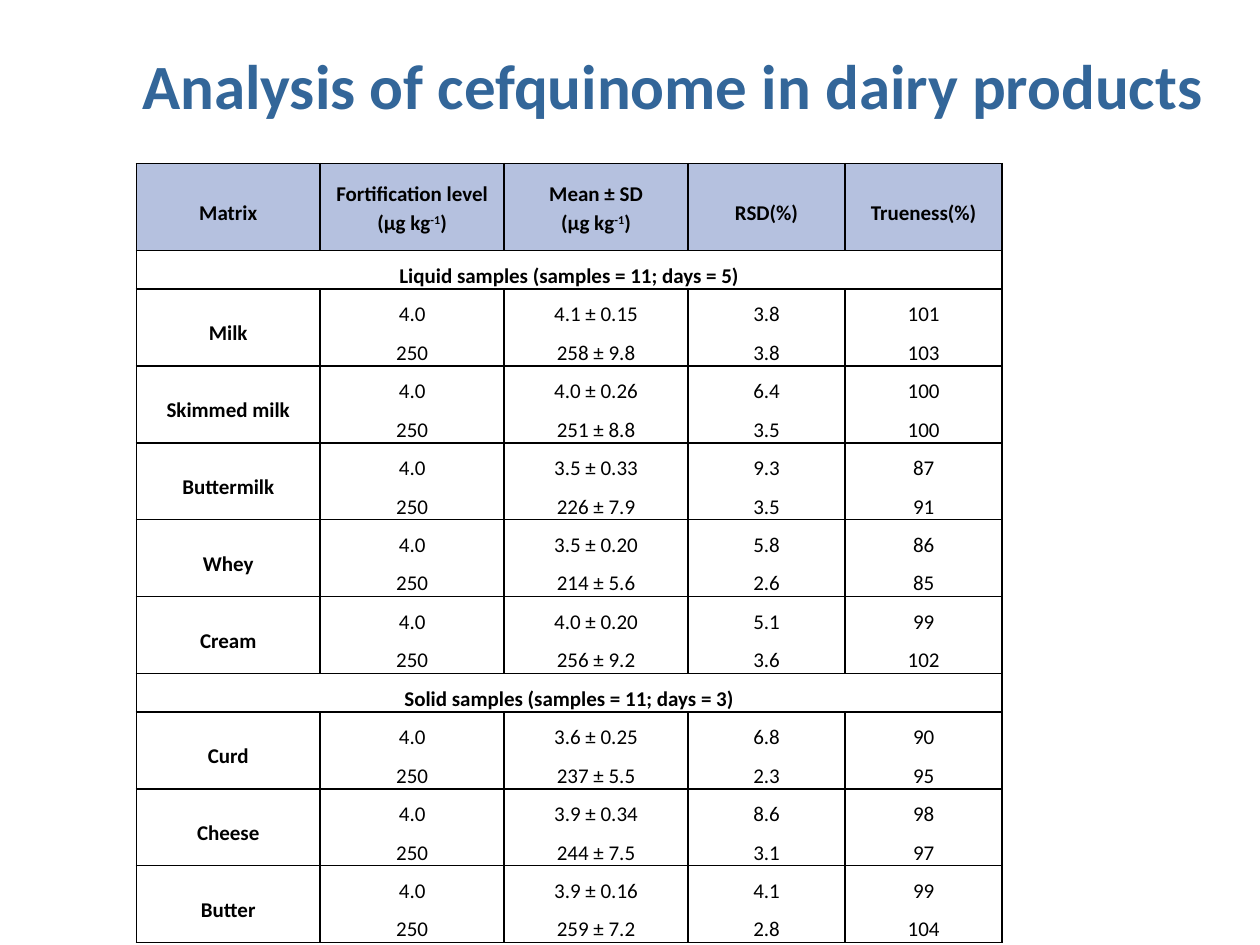
from pptx import Presentation
from pptx.dml.color import RGBColor
from pptx.enum.text import MSO_ANCHOR as Anchor, MSO_AUTO_SIZE as AutoSize, PP_ALIGN as Align
from pptx.oxml import parse_xml
from pptx.oxml.ns import nsdecls
from pptx.util import Pt

COLORS = {"title": "336699", "text": "000000", "border": "000000", "header": "B5C1DF"}
TITLE = "Analysis of cefquinome in dairy products"
UNIT = ("(μg kg", "-1", ")")
HEADERS = [
    [("Matrix",)],
    [("Fortification level",), UNIT],
    [("Mean ± SD",), UNIT],
    [("RSD(%)",)],
    [("Trueness(%)",)],
]
LEVELS = ("4.0", "250")
SECTIONS = [
    ("Liquid samples (samples = 11; days = 5)", [
        ("Milk", ("4.1 ± 0.15", "3.8", "101"), ("258 ± 9.8", "3.8", "103")),
        ("Skimmed milk", ("4.0 ± 0.26", "6.4", "100"), ("251 ± 8.8", "3.5", "100")),
        ("Buttermilk", ("3.5 ± 0.33", "9.3", "87"), ("226 ± 7.9", "3.5", "91")),
        ("Whey", ("3.5 ± 0.20", "5.8", "86"), ("214 ± 5.6", "2.6", "85")),
        ("Cream", ("4.0 ± 0.20", "5.1", "99"), ("256 ± 9.2", "3.6", "102")),
    ]),
    ("Solid samples (samples = 11; days = 3)", [
        ("Curd", ("3.6 ± 0.25", "6.8", "90"), ("237 ± 5.5", "2.3", "95")),
        ("Cheese", ("3.9 ± 0.34", "8.6", "98"), ("244 ± 7.5", "3.1", "97")),
        ("Butter", ("3.9 ± 0.16", "4.1", "99"), ("259 ± 7.2", "2.8", "104")),
    ]),
]
COLUMN_WIDTHS = [105.1, 105.1, 105.1, 89.8, 89.8]
HEADER_HEIGHT, ROW_HEIGHT = 49.7, 21.6
TABLE_LEFT, TABLE_TOP = 77.9, 93.5
TITLE_BOX = {"left": Pt(74), "top": Pt(28.1), "width": Pt(620.6), "height": Pt(104.4)}
TITLE_FRAME = {"word_wrap": True, "auto_size": AutoSize.NONE, "vertical_anchor": Anchor.TOP,
               "margin_right": 0}
TITLE_PARA = {"alignment": Align.LEFT, "line_spacing": 0.9}
TITLE_FONT = {"name": "Calibri", "size": Pt(36), "bold": True}
CELL_FORMAT = {"vertical_anchor": Anchor.MIDDLE, "margin_left": Pt(5), "margin_right": Pt(5),
               "margin_top": 0, "margin_bottom": 0}
CELL_FONT = {"name": "Calibri", "size": Pt(12)}
ALL_SIDES = "LRTB"


def apply(target, values):
    for name, value in values.items():
        setattr(target, name, value)


def set_font(font, values, color):
    apply(font, values)
    font.color.rgb = RGBColor.from_string(COLORS[color])


def set_borders(cell, sides):
    properties = cell._tc.get_or_add_tcPr()
    for index, side in enumerate(ALL_SIDES):
        paint = "<a:noFill/>"
        if side in sides:
            paint = f'<a:solidFill><a:srgbClr val="{COLORS["border"]}"/></a:solidFill>'
        line = parse_xml(f'<a:ln{side} {nsdecls("a")} w="{Pt(1)}">{paint}</a:ln{side}>')
        properties.insert(index, line)


def write_cell(cell, lines, bold):
    apply(cell, CELL_FORMAT)
    frame = cell.text_frame
    for number, parts in enumerate(lines):
        para = frame.add_paragraph() if number else frame.paragraphs[0]
        apply(para, {"alignment": Align.CENTER, "line_spacing": 1.15 if len(lines) > 1 else 1.5})
        for position, text in enumerate(parts):
            span = para.add_run()
            span.text = text
            set_font(span.font, {**CELL_FONT, "bold": bold}, "text")
            if position == 1:
                span._r.get_or_add_rPr().set("baseline", "30000")


def style_cell(cell, sides, fill=None):
    if fill:
        cell.fill.solid()
        cell.fill.fore_color.rgb = RGBColor.from_string(COLORS[fill])
    else:
        cell.fill.background()
    set_borders(cell, sides)


def add_title(page):
    box = page.shapes.title
    apply(box, TITLE_BOX)
    apply(box.text_frame, TITLE_FRAME)
    para = box.text_frame.paragraphs[0]
    apply(para, TITLE_PARA)
    span = para.add_run()
    span.text = TITLE
    set_font(span.font, TITLE_FONT, "title")


def add_results(page):
    row_count = 1 + sum(1 + len(LEVELS) * len(products) for _, products in SECTIONS)
    column_count = len(COLUMN_WIDTHS)
    height = HEADER_HEIGHT + ROW_HEIGHT * (row_count - 1)
    table = page.shapes.add_table(row_count, column_count, Pt(TABLE_LEFT), Pt(TABLE_TOP),
                                  Pt(sum(COLUMN_WIDTHS)), Pt(height)).table
    apply(table, {"first_row": False, "horz_banding": False})
    for column, width in zip(table.columns, COLUMN_WIDTHS):
        column.width = Pt(width)
    for index, row in enumerate(table.rows):
        row.height = Pt(ROW_HEIGHT if index else HEADER_HEIGHT)

    for column, lines in enumerate(HEADERS):
        write_cell(table.cell(0, column), lines, True)
        style_cell(table.cell(0, column), ALL_SIDES, "header")

    row = 1
    for heading, products in SECTIONS:
        table.cell(row, 0).merge(table.cell(row, column_count - 1))
        write_cell(table.cell(row, 0), [(heading,)], True)
        for column in range(column_count):
            style_cell(table.cell(row, column), ALL_SIDES)
        row += 1
        for product, *results in products:
            table.cell(row, 0).merge(table.cell(row + 1, 0))
            write_cell(table.cell(row, 0), [(product,)], True)
            for level, values, edge in zip(LEVELS, results, "TB"):
                style_cell(table.cell(row, 0), ALL_SIDES)
                for column, value in enumerate((level, *values), 1):
                    write_cell(table.cell(row, column), [(value,)], False)
                    style_cell(table.cell(row, column), "LR" + edge)
                row += 1


def main():
    deck = Presentation()
    apply(deck, {"slide_width": Pt(720), "slide_height": Pt(540)})
    page = deck.slides.add_slide(deck.slide_layouts[5])
    add_title(page)
    add_results(page)
    deck.save("out.pptx")


if __name__ == "__main__":
    main()
